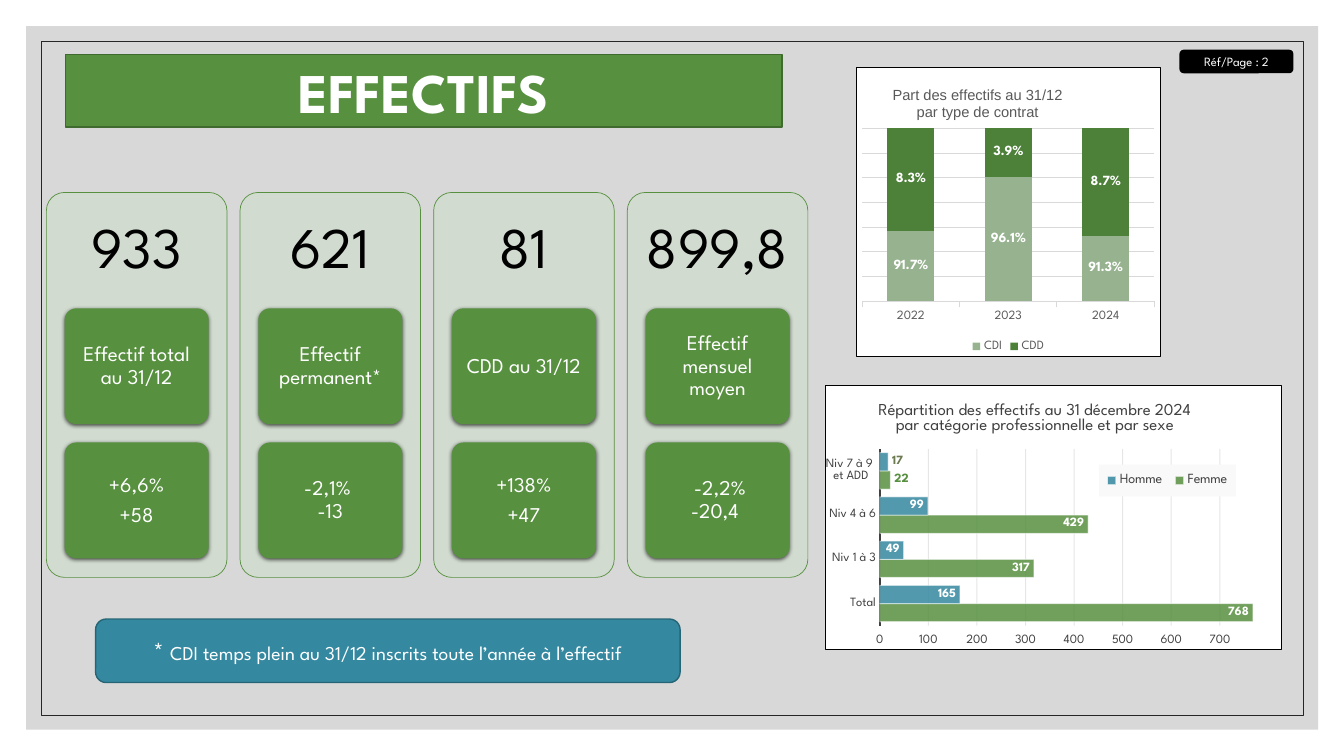
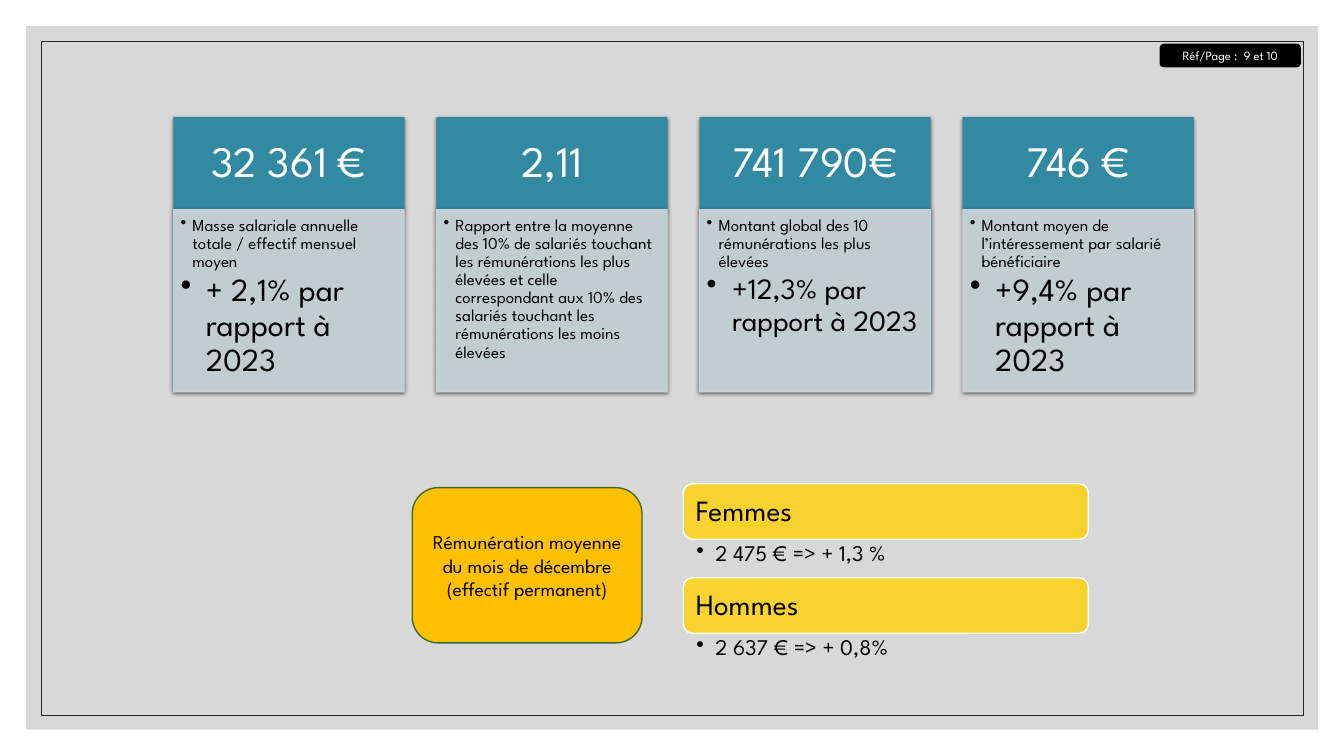
from pptx import Presentation, util as u
from pptx.chart.data import CategoryChartData
from pptx.dml.color import RGBColor
from pptx.enum import chart as ch, shapes, text
from pptx.oxml import parse_xml
from pptx.oxml.ns import nsdecls, qn

FONT = "League Spartan"
GREEN = RGBColor(0x57, 0x90, 0x3F)
DEEP = RGBColor(0x40, 0x6B, 0x2F)
FOREST = RGBColor(0x4D, 0x80, 0x38)
SAGE = RGBColor(0x96, 0xB2, 0x8E)
OLIVE = RGBColor(0x6B, 0x7A, 0x4F)
PALE = RGBColor(0xD1, 0xDB, 0xCF)
BLUE = RGBColor(0x34, 0x88, 0xA0)
TEAL = RGBColor(0x31, 0x89, 0xA2)
NAVY = RGBColor(0x26, 0x65, 0x76)
MIST = RGBColor(0xCE, 0xDA, 0xDF)
GOLD = RGBColor(0xFF, 0xC0, 0x00)
YELLOW = RGBColor(0xF8, 0xD2, 0x2F)
WHITE = RGBColor(0xFF, 0xFF, 0xFF)
BLACK = RGBColor(0x00, 0x00, 0x00)
INK = RGBColor(0x26, 0x26, 0x26)
DARK = RGBColor(0x40, 0x40, 0x40)
GREY = RGBColor(0x59, 0x59, 0x59)
SILVER = RGBColor(0xBF, 0xBF, 0xBF)
RULE = RGBColor(0xD9, 0xD9, 0xD9)
GRID = RGBColor(0x0D, 0x0D, 0x0D)

RECT = shapes.MSO_SHAPE.RECTANGLE
ROUND = shapes.MSO_SHAPE.ROUNDED_RECTANGLE
MID = text.MSO_ANCHOR.MIDDLE
TOP = text.MSO_ANCHOR.TOP
LEFT = text.PP_ALIGN.LEFT
CENTER = text.PP_ALIGN.CENTER


def style(font, size, color, bold=False, face=FONT):
    """Format a font."""
    font.name, font.size, font.bold = face, u.Pt(size), bold
    font.color.rgb = color


def write(frame, paras, size=14, color=WHITE, bold=False, face=FONT,
          align=CENTER, space=None, after=0, indents=(), bullet=False):
    """Fill a frame with paragraphs, each a string or a list of (text, size)."""
    for i, para in enumerate([paras] if isinstance(paras, str) else paras):
        p = frame.paragraphs[0] if i == 0 else frame.add_paragraph()
        if i < len(indents):
            props = p._p.get_or_add_pPr()
            props.set("marL", str(u.Cm(indents[i])))
            props.set("indent", str(-u.Cm(indents[i]) if bullet else 0))
            if bullet:
                props.append(parse_xml(f'<a:buChar {nsdecls("a")} char="•"/>'))
        p.alignment = align
        p.space_after = u.Pt(after)
        if space:
            p.line_spacing = space
        for words, pt in [(para, size)] if isinstance(para, str) else para:
            run = p.add_run()
            run.text = words
            style(run.font, pt, color, bold, face)


def veil(node, where, opacity):
    """Set the opacity, in percent, of the colours found in a node."""
    for tone in node.xpath(where):
        tone.append(parse_xml(f'<a:alpha {nsdecls("a")} val="{opacity * 1000}"/>'))


def place(node, index, x, y, w=None, h=None, inner=False):
    """Give a chart part a fixed place, as fractions of the chart."""
    for old in node.findall(qn("c:layout")):
        node.remove(old)
    tags = '<c:layoutTarget val="inner"/>' if inner else ""
    tags += '<c:xMode val="edge"/><c:yMode val="edge"/>'
    for tag, val in zip("xywh", (x, y, w, h)):
        if val is not None:
            tags += f'<c:{tag} val="{val}"/>'
    node.insert(index, parse_xml(
        f'<c:layout {nsdecls("c")}><c:manualLayout>{tags}</c:manualLayout></c:layout>'))


def panel(fill, line=""):
    """Return the fill and outline of a chart part."""
    return parse_xml(f'<c:spPr {nsdecls("c", "a")}><a:solidFill><a:srgbClr val="{fill}"/>'
                     f'</a:solidFill>{line}</c:spPr>')


class Deck:
    """Holds the presentation, its style and the current slide."""

    def __init__(self):
        self.prs = Presentation()
        self.prs.slide_width, self.prs.slide_height = u.Cm(33.87), u.Cm(19.05)
        self.page = None

    def slide(self, ref, spot, title=None):
        """Start a framed slide with its reference tag."""
        self.page = self.prs.slides.add_slide(self.prs.slide_layouts[5 if title else 6])
        self.box((0.66, 0.66, 32.56, 17.73), fill=SILVER, opacity=60)
        self.box((1.04, 1.04, 31.8, 16.99), line=INK, width=0.5)
        self.box(spot, ref, ROUND, fill=BLACK, line=BLACK, ins=(0.1, 0, 0.1, 0), size=9)
        if title:
            head = self.page.shapes.title
            self.page.shapes.element.append(head.element)
            head.left, head.top, head.width, head.height = map(u.Cm, (1.65, 1.37, 18.06, 1.83))
            self.dress(head, title, fill=GREEN, line=DEEP, size=40, bold=True)

    def box(self, at, words=None, form=RECT, adj=None, **look):
        """Add a preset shape."""
        shape = self.page.shapes.add_shape(form, *map(u.Cm, at))
        if adj:
            shape.adjustments[0] = adj
        self.dress(shape, words, **look)

    def dress(self, shape, words, fill=None, line=None, width=1, opacity=None,
              shadow=False, ins=(0.25, 0.13, 0.25, 0.13), anchor=MID, **fmt):
        """Set the fill, outline, shadow and text of a shape."""
        if fill is None:
            shape.fill.background()
        else:
            shape.fill.solid()
            shape.fill.fore_color.rgb = fill
        if line is None:
            shape.line.fill.background()
        else:
            shape.line.color.rgb = line
            shape.line.width = u.Pt(width)
        if opacity:
            veil(shape.element, "p:spPr//a:srgbClr", opacity)
        shape.shadow.inherit = False
        if shadow:
            shape.element.xpath("p:spPr/a:effectLst")[0].append(parse_xml(
                f'<a:outerShdw {nsdecls("a")} blurRad="38100" dist="12700" dir="5400000" '
                'rotWithShape="0"><a:srgbClr val="000000"><a:alpha val="63000"/>'
                '</a:srgbClr></a:outerShdw>'))
        if words:
            frame = shape.text_frame
            frame.word_wrap, frame.vertical_anchor = True, anchor
            (frame.margin_left, frame.margin_top,
             frame.margin_right, frame.margin_bottom) = map(u.Cm, ins)
            write(frame, words, **fmt)

    def chart(self, kind, at, cats, rows, title, spot, plot, gap, overlap, tone, label,
              **fmt):
        """Add a framed bar chart; rows hold name, values and colour."""
        data = CategoryChartData()
        data.categories = cats
        for name, vals, _ in rows:
            data.add_series(name, vals)
        chart = self.page.shapes.add_chart(kind, *map(u.Cm, at), data).chart
        style(chart.font, 10, BLACK)
        edge = '<a:ln w="9525"><a:solidFill><a:srgbClr val="000000"/></a:solidFill></a:ln>'
        chart.element.find(qn("c:chart")).addnext(panel(WHITE, edge))
        chart.has_title = True
        write(chart.chart_title.text_frame, title, color=tone, align=LEFT, **fmt)
        place(chart.element.xpath(".//c:chart/c:title")[0], 1, *spot)
        place(chart.element.xpath(".//c:plotArea")[0], 0, *plot, inner=True)
        chart.has_legend = True
        chart.legend.position = ch.XL_LEGEND_POSITION.BOTTOM
        chart.legend.include_in_layout = False
        bars = chart.plots[0]
        bars.gap_width, bars.overlap, bars.vary_by_categories = gap, overlap, False
        for series, (_, _, color) in zip(bars.series, rows):
            series.format.fill.solid()
            series.format.fill.fore_color.rgb = color
            tags = series.data_labels
            tags.show_value = True
            tags.number_format, tags.number_format_is_linked = label[0], False
            tags.position = label[1]
            style(tags.font, label[2], WHITE, True)
        for axis in (chart.category_axis, chart.value_axis):
            style(axis.tick_labels.font, 9, tone)
            axis.minor_tick_mark = ch.XL_TICK_MARK.NONE
        chart.value_axis.has_major_gridlines = True
        chart.value_axis.major_gridlines.format.line.width = u.Pt(0.75)
        return chart

    def scale(self, axis, low, high, step, grid):
        """Set the range and gridlines of a value axis."""
        axis.minimum_scale, axis.maximum_scale, axis.major_unit = low, high, step
        axis.major_gridlines.format.line.color.rgb = grid


def staff(deck):
    """Build the headcount slide."""
    deck.slide("Réf/Page : 2", (29.74, 1.27, 2.84, 0.56), "EFFECTIFS")
    cards = [("933", "Effectif total au 31/12", ["+6,6%", "+58"], 5),
             ("621", "Effectif permanent*", ["-2,1% ", "-13"], 0),
             ("81", "CDD au 31/12", ["+138%", "+47"], 5),
             ("899,8", "Effectif mensuel moyen", [" -2,2%", "-20,4 "], 0)]
    for i, (count, name, change, gap) in enumerate(cards):
        x = 1.17 + 4.88 * i
        deck.box((x, 4.85, 4.55, 9.7), count, ROUND, 0.1, fill=PALE, line=GREEN, width=0.5,
                 ins=(0.2, 0, 0.2, 6.78), size=41, color=BLACK, space=0.9)
        for y, words, after in ((7.77, name, 0), (11.15, change, gap)):
            deck.box((x + 0.46, y, 3.63, 2.92), words, ROUND, 0.1, fill=GREEN, shadow=True,
                     ins=(0.1, 0.08, 0.1, 0.08), size=15, space=0.9, after=after)
    note = [("* ", 18), ("CDI temps plein au 31/12 inscrits toute l’année à l’effectif", 14)]
    deck.box((2.41, 15.6, 14.73, 1.6), [note], ROUND, fill=BLUE, line=NAVY)

    part = deck.chart(
        ch.XL_CHART_TYPE.COLUMN_STACKED, (21.56, 1.7, 7.7, 7.29), ["2024", "2023", "2022"],
        [("CDI", (0.913, 0.961, 0.917), SAGE), ("CDD", (0.087, 0.039, 0.083), FOREST)],
        ["Part des effectifs au 31/12", "par type de contrat"], (0.11, 0.05),
        (0.02, 0.21, 0.96, 0.6), 106, 100, GREY,
        ("0.0%", ch.XL_LABEL_POSITION.CENTER, 10), size=10.5, face="Arial", indents=(0, 2))
    style(part.legend.font, 9, GREY)
    deck.scale(part.value_axis, 0.86, 1, 0.02, RULE)
    part.value_axis.visible = False
    years = part.category_axis
    years.reverse_order = True
    years.major_tick_mark = ch.XL_TICK_MARK.OUTSIDE
    years.format.line.color.rgb = RULE
    years.format.line.width = u.Pt(0.75)

    split = deck.chart(
        ch.XL_CHART_TYPE.BAR_CLUSTERED, (20.78, 9.7, 11.53, 6.68),
        ["Total", "Niv 1 à 3", "Niv 4 à 6", "Niv 7 à 9 \net ADD"],
        [("Femme", (768, 317, 429, 22), GREEN), ("Homme", (165, 49, 99, 17), BLUE)],
        ["Répartition des effectifs au 31 décembre 2024",
         "par catégorie professionnelle et par sexe"], (0.11, 0.05),
        (0.12, 0.24, 0.83, 0.67), 43, 0, DARK,
        ("General", ch.XL_LABEL_POSITION.INSIDE_END, 9), size=12, indents=(0, 1.44))
    style(split.legend.font, 10, DARK)
    key = split.element.xpath(".//c:legend")[0]
    place(key, 1, 0.6, 0.3, 0.3, 0.12)
    key.find(qn("c:overlay")).addnext(panel("F9F9F9"))
    deck.scale(split.value_axis, 0, 780, 100, GRID)
    split.value_axis.format.line.fill.background()
    levels = split.category_axis
    levels.major_tick_mark = ch.XL_TICK_MARK.NONE
    levels.format.line.color.rgb = DARK
    levels.format.line.width = u.Pt(1.5)
    for series, color in zip(split.plots[0].series, (GREEN, OLIVE)):
        series.format.line.color.rgb = WHITE
        series.format.line.width = u.Pt(0.75)
        tag = series.points[3].data_label
        style(tag.font, 9, color, True)
        tag.position = ch.XL_LABEL_POSITION.OUTSIDE_END
    veil(split.element, ".//c:ser/c:spPr/a:solidFill/a:srgbClr", 85)
    veil(split.element, ".//c:ser/c:spPr/a:ln//a:srgbClr", 50)
    veil(split.element, ".//c:majorGridlines//a:srgbClr", 10)


def pay(deck):
    """Build the pay slide."""
    deck.slide("Réf/Page :  9 et 10", (29.24, 1.12, 3.53, 0.56))
    cards = [("32 361 €", [("Masse salariale annuelle totale / effectif mensuel moyen", 12)],
              [("+ 2,1% par rapport à 2023", 23)]),
             ("2,11", [("Rapport entre la moyenne des 10% de salariés touchant les "
                        "rémunérations les plus élevées et celle correspondant aux 10% des "
                        "salariés touchant les rémunérations les moins élevées", 12)]),
             ("741 790€", [("Montant global des 10 rémunérations les plus élevées", 12)],
              [("+12,3% par rapport à 2023", 21)]),
             ("746 €", [("Montant moyen de l’intéressement par salarié bénéficiaire", 12)],
              [("+9,4% par rapport à 2023", 23)])]
    for i, (sum_, *facts) in enumerate(cards):
        x = 4.37 + 6.63 * i
        deck.box((x, 2.95, 5.82, 2.33), sum_, fill=TEAL, shadow=True, size=31, space=0.9)
        deck.box((x, 5.28, 5.82, 4.6), facts, fill=MIST, line=MIST, width=0.5, opacity=90,
                 shadow=True, ins=(0.18, 0.18, 0.23, 0.25), anchor=TOP, color=BLACK,
                 align=LEFT, space=0.9, after=2, indents=(0.3, 0.64), bullet=True)
    deck.box((10.39, 12.29, 5.79, 3.91),
             "Rémunération moyenne du mois de décembre (effectif permanent)", ROUND,
             fill=GOLD, line=DEEP, color=BLACK)
    for i, (who, wage) in enumerate((("Femmes", "2 475 € => + 1,3 %"),
                                     ("Hommes", "2 637 € => + 0,8%"))):
        y = 12.19 + 2.37 * i
        deck.box((17.22, y, 10.21, 1.4), who, ROUND, fill=YELLOW, line=WHITE, size=21,
                 color=BLACK, align=LEFT, space=0.9)
        deck.box((17.22, y + 1.4, 10.21, 0.97), wage, ins=(0.33, 0.08, 0.4, 0.08),
                 anchor=TOP, size=16, color=BLACK, align=LEFT, space=0.9,
                 indents=(0.48,), bullet=True)


def main():
    """Build and save the deck."""
    deck = Deck()
    staff(deck)
    pay(deck)
    deck.prs.save("out.pptx")


if __name__ == "__main__":
    main()
